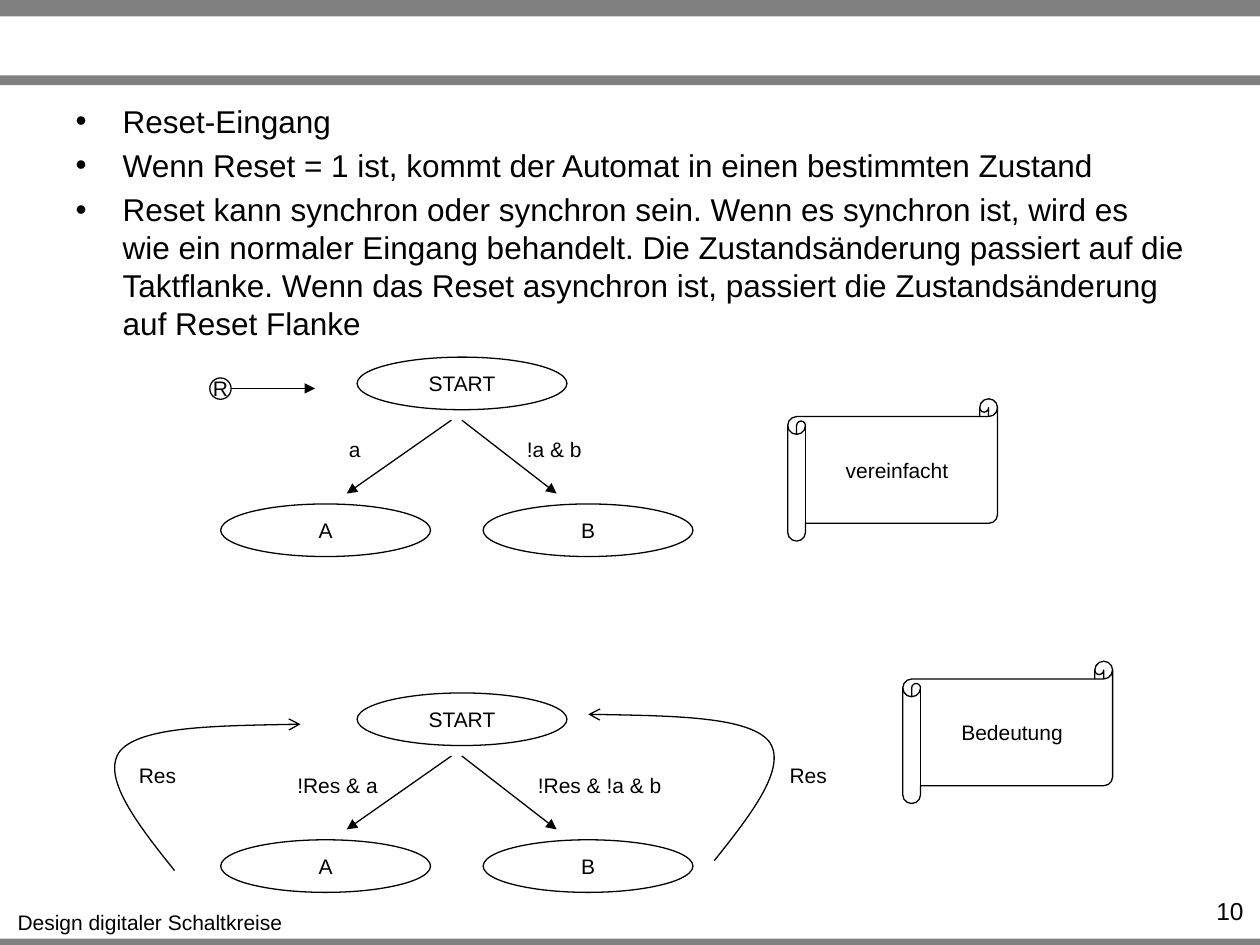
"""Builds a slide on the reset input of a state machine."""
from dataclasses import dataclass

from pptx import Presentation
from pptx import util as u
from pptx.dml.color import RGBColor
from pptx.enum import shapes, text
from pptx.oxml import parse_xml
from pptx.oxml.ns import nsdecls, qn
from pptx.slide import Slide

Preset = shapes.MSO_SHAPE
Align = text.PP_ALIGN


def colour(hex_string):
    return RGBColor.from_string(hex_string)


@dataclass
class Board:
    slide: Slide
    font: str = "Arial"
    ink: str = "000000"
    grey: str = "808080"
    label_size: int = 12
    line_width: float = 0.75

    def letter(self, frame, lines, size, align):
        frame.text = "\n".join(lines)
        for paragraph in frame.paragraphs:
            paragraph.alignment = align
            for run in paragraph.runs:
                run.font.name = self.font
                run.font.size = u.Pt(size)
                run.font.color.rgb = colour(self.ink)

    def stroke(self, line, head=None):
        line.color.rgb = colour(self.ink)
        line.width = u.Pt(self.line_width)
        if head:
            line._get_or_add_ln().append(
                parse_xml(f'<a:tailEnd {nsdecls("a")} type="{head}"/>'))

    def bar(self, top, height):
        bar = self.slide.shapes.add_shape(
            Preset.RECTANGLE, 0, u.Cm(top), u.Cm(25.4), u.Cm(height))
        bar.shadow.inherit = False
        bar.fill.solid()
        bar.fill.fore_color.rgb = colour(self.grey)
        bar.line.fill.background()

    def node(self, preset, caption, left, top, width, height):
        node = self.slide.shapes.add_shape(
            preset, u.Cm(left), u.Cm(top), u.Cm(width), u.Cm(height))
        node.shadow.inherit = False
        node.fill.background()
        self.stroke(node.line)
        frame = node.text_frame
        frame.word_wrap = False
        frame.vertical_anchor = text.MSO_ANCHOR.MIDDLE
        self.letter(frame, [caption], self.label_size, Align.CENTER)

    def state(self, caption, left, top):
        self.node(Preset.OVAL, caption, left, top, 4.23, 1.06)

    def scroll(self, caption, left, top):
        self.node(Preset.HORIZONTAL_SCROLL, caption, left, top, 4.23, 2.87)

    def label(self, caption, left, top, width):
        box = self.slide.shapes.add_textbox(
            u.Cm(left), u.Cm(top), u.Cm(width), u.Cm(0.77))
        box.text_frame.word_wrap = False
        box.text_frame.auto_size = text.MSO_AUTO_SIZE.SHAPE_TO_FIT_TEXT
        self.letter(box.text_frame, [caption], self.label_size, Align.CENTER)

    def page_number(self, number):
        box = self.slide.shapes.add_textbox(
            u.Cm(23.11), u.Cm(17.93), u.Cm(2.21), u.Cm(0.61))
        box.text_frame.word_wrap = True
        self.letter(box.text_frame, [number], 14, Align.RIGHT)

    def bullets(self, lines, left, top, width, height):
        body = self.slide.placeholders[1]
        body.left, body.top = u.Cm(left), u.Cm(top)
        body.width, body.height = u.Cm(width), u.Cm(height)
        frame = body.text_frame
        frame.auto_size = text.MSO_AUTO_SIZE.NONE
        self.letter(frame, lines, 18, Align.LEFT)
        for index, paragraph in enumerate(frame.paragraphs):
            paragraph.space_before = u.Pt(3.6 if index else 0)
            properties = paragraph._p.get_or_add_pPr()
            properties.set("marL", str(u.Cm(0.95)))
            properties.set("indent", str(u.Cm(-0.95)))

    def arrow(self, x1, y1, x2, y2):
        arrow = self.slide.shapes.add_connector(
            shapes.MSO_CONNECTOR.STRAIGHT, u.Cm(x1), u.Cm(y1), u.Cm(x2), u.Cm(y2))
        self.stroke(arrow.line, "triangle")
        arrow._element.spPr.append(parse_xml(f'<a:effectLst {nsdecls("a")}/>'))

    def loop(self, left, top, mirrored=False):
        width = u.Cm(3.73)
        bends = [(3.3, 2), (4.04, 1.04), (3.63, 0.53), (3.2, 0.05), (1.6, 0.03), (0, 0)]
        builder = self.slide.shapes.build_freeform(u.Cm(2.54), u.Cm(2.95))
        builder.add_line_segments([(u.Cm(x), u.Cm(y)) for x, y in bends], close=False)
        loop = builder.convert_to_shape(u.Cm(left), u.Cm(top))
        loop.width = width
        outline = loop._element.spPr.find(".//" + qn("a:path"))
        outline.set("w", str(width))
        segments = outline.findall(qn("a:lnTo"))
        for start in range(0, len(segments), 3):
            curve = parse_xml(f'<a:cubicBezTo {nsdecls("a")}/>')
            outline.append(curve)
            for segment in segments[start:start + 3]:
                curve.append(segment[0])
                outline.remove(segment)
        if mirrored:
            loop._element.spPr.find(qn("a:xfrm")).set("flipH", "1")
        loop.shadow.inherit = False
        loop.fill.background()
        self.stroke(loop.line, "arrow")

    def automaton(self, top):
        self.state("START", 7.2, top)
        self.state("A", 4.45, top + 2.96)
        self.state("B", 9.74, top + 2.96)
        self.arrow(9.1, top + 1.27, 6.99, top + 2.75)
        self.arrow(9.31, top + 1.27, 11.22, top + 2.75)


def main():
    deck = Presentation()
    deck.slide_width, deck.slide_height = u.Cm(25.4), u.Cm(19.05)
    slide = deck.slides.add_slide(deck.slide_layouts[1])
    title = slide.shapes.title.element
    title.getparent().remove(title)
    board = Board(slide)

    for top, height in [(18.92, 0.2), (0, 0.33), (1.52, 0.2)]:
        board.bar(top, height)
    board.label("Design digitaler Schaltkreise", 0.08, 18.21, 5.89)
    board.bullets([
        "Reset-Eingang",
        "Wenn Reset = 1 ist, kommt der Automat in einen bestimmten Zustand",
        "Reset kann synchron oder synchron sein. Wenn es synchron ist, wird es "
        "wie ein normaler Eingang behandelt. Die Zustandsänderung passiert auf die "
        "Taktflanke. Wenn das Reset asynchron ist, passiert die Zustandsänderung "
        "auf Reset Flanke",
    ], 1.27, 1.93, 22.86, 1.88)

    simplified_top, meaning_top = 7.2, 13.97
    board.automaton(simplified_top)
    board.arrow(4.66, 7.83, 6.35, 7.83)
    board.node(Preset.OVAL, "R", 4.23, 7.62, 0.43, 0.43)
    board.automaton(meaning_top)
    board.loop(11.86, 14.4)
    board.loop(2.33, 14.6, mirrored=True)

    for caption, left, top, width in [
        ("a", 6.78, simplified_top + 1.48, 0.74),
        ("!a & b", 10.36, simplified_top + 1.48, 1.63),
        ("!Res & a", 5.73, meaning_top + 1.48, 2.15),
        ("!Res & !a & b", 10.58, meaning_top + 1.48, 3.02),
        ("Res", 15.66, meaning_top + 1.27, 1.27),
        ("Res", 2.54, meaning_top + 1.27, 1.27),
    ]:
        board.label(caption, left, top, width)

    board.scroll("vereinfacht", 15.88, 8.04)
    board.scroll("Bedeutung", 18.2, 13.33)
    board.page_number("10")
    deck.save("out.pptx")


if __name__ == "__main__":
    main()
